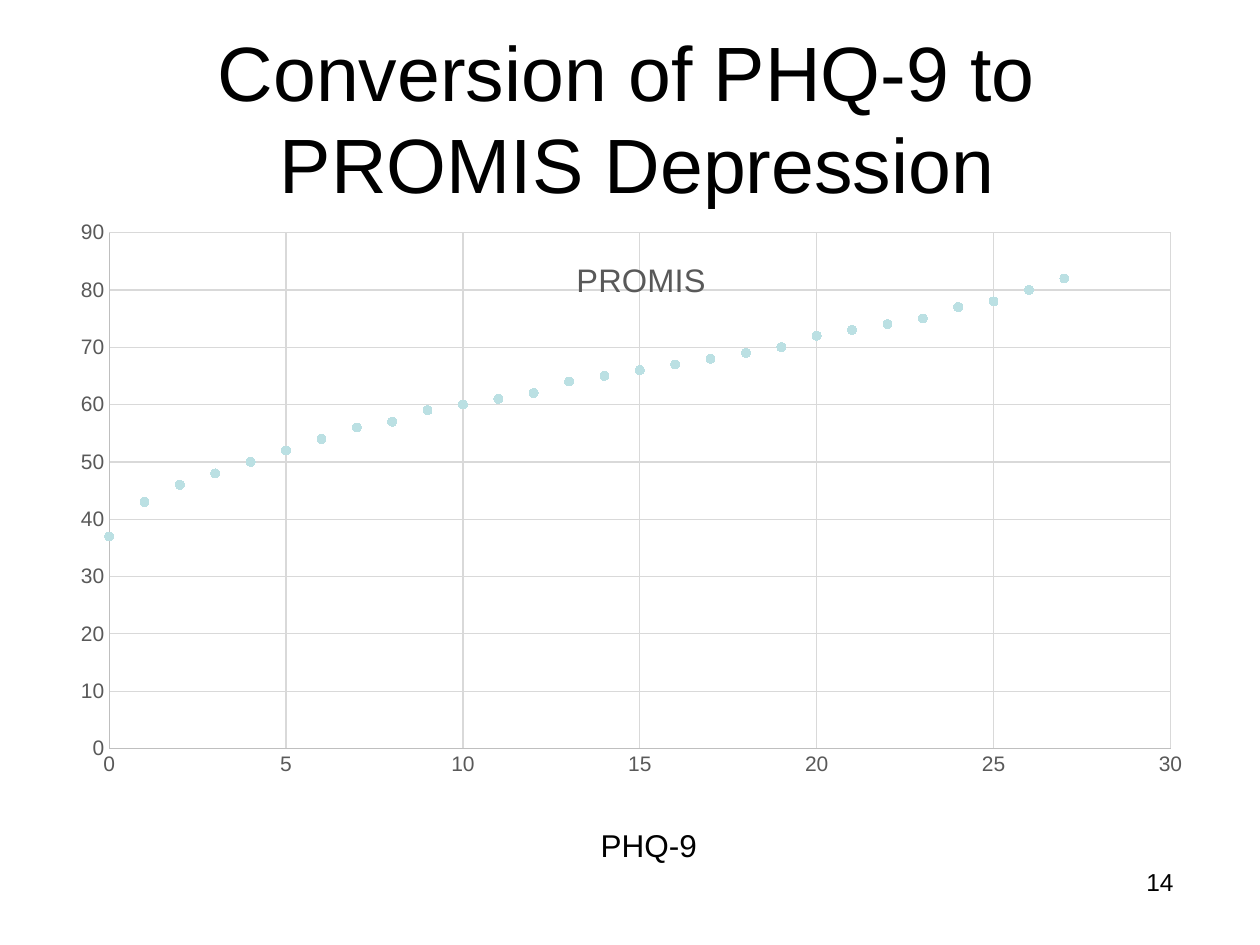
from lxml.etree import SubElement
from pptx import Presentation
from pptx.chart.data import XyChartData
from pptx.dml.color import RGBColor
from pptx.enum.chart import XL_CHART_TYPE as CT, XL_MARKER_STYLE as MS, XL_TICK_MARK as TM
from pptx.enum.text import MSO_ANCHOR, PP_ALIGN
from pptx.oxml import parse_xml
from pptx.oxml.ns import nsdecls, qn
from pptx.util import Pt

COLORS = {"text": "000000", "label": "595959", "axis": "BFBFBF",
          "grid": "D9D9D9", "dot": "BBE0E3"}
PROMIS = [37, 43, 46, 48, 50, 52, 54, 56, 57, 59, 60, 61, 62, 64,
          65, 66, 67, 68, 69, 70, 72, 73, 74, 75, 77, 78, 80, 82]


def set_font(font, size, color="text"):
    font.name, font.size, font.bold = "Arial", Pt(size), False
    font.color.rgb = RGBColor.from_string(COLORS[color])


def set_layout(parent, index, **values):
    for old in parent.findall(qn("c:layout")):
        parent.remove(old)
    layout = parse_xml(f"<c:layout {nsdecls('c')}><c:manualLayout/></c:layout>")
    for tag, value in values.items():
        SubElement(layout[0], qn(f"c:{tag}")).set("val", str(value))
    parent.insert(index, layout)


prs = Presentation()
prs.slide_width, prs.slide_height = Pt(720), Pt(540)
s = prs.slides.add_slide(prs.slide_layouts[5])

# Title
title = s.shapes.title
title.left, title.top, title.width, title.height = Pt(0), Pt(21.6), Pt(728.6), Pt(90)
tf = title.text_frame
tf.text = "Conversion of PHQ-9 to \vPROMIS Depression"
tf.vertical_anchor = MSO_ANCHOR.MIDDLE
p = tf.paragraphs[0]
p.alignment = PP_ALIGN.CENTER
for r in p.runs:
    set_font(r.font, 44)

# Scatter chart: one PROMIS score for each PHQ-9 score from 0
data = XyChartData()
series = data.add_series("PROMIS")
for phq9, promis in enumerate(PROMIS):
    series.add_data_point(phq9, promis)
chart = s.shapes.add_chart(CT.XY_SCATTER, Pt(40.3), Pt(126), Pt(649.4), Pt(365.8), data).chart
set_font(chart.font, 10)
chart.has_legend = False
chart.plots[0].vary_by_categories = False
set_layout(chart._chartSpace.chart.plotArea, 0, layoutTarget="inner", xMode="edge",
           yMode="edge", x=0.034, y=0.019, w=0.934, h=0.806)

# Chart title, laid over the plot
chart.has_title = True
ct = chart.chart_title
ct.text_frame.text = "PROMIS"
set_font(ct.text_frame.paragraphs[0].runs[0].font, 18.6, "label")
set_layout(ct._element, 1, xMode="edge", yMode="edge", x=0.44, y=0.05)
ct._element.find(qn("c:overlay")).set("val", "1")

# Axes
for axis, top, step in ((chart.category_axis, 30, 5), (chart.value_axis, 90, 10)):
    axis.minimum_scale, axis.maximum_scale, axis.major_unit = 0, top, step
    axis.major_tick_mark = axis.minor_tick_mark = TM.NONE
    axis.has_major_gridlines = True
    set_font(axis.tick_labels.font, 12, "label")
    for line, color in ((axis.format.line, "axis"), (axis.major_gridlines.format.line, "grid")):
        line.width = Pt(0.75)
        line.color.rgb = RGBColor.from_string(COLORS[color])

# Dots
dots = chart.plots[0].series[0]
dots.smooth = False
dots.format.line.fill.background()
dots.marker.style, dots.marker.size = MS.CIRCLE, 5
dots.marker.format.fill.solid()
dots.marker.format.fill.fore_color.rgb = RGBColor.from_string(COLORS["dot"])
dots.marker.format.line.color.rgb = RGBColor.from_string(COLORS["dot"])

# Horizontal axis name and slide number
for text, left, top, height, size in (("PHQ-9", 336.2, 468.7, 28.8, 18),
                                      ("14", 648, 491.8, 24.5, 14)):
    tf = s.shapes.add_textbox(Pt(left), Pt(top), Pt(72), Pt(height)).text_frame
    tf.word_wrap = True
    r = tf.paragraphs[0].add_run()
    r.text = text
    set_font(r.font, size)

prs.save("out.pptx")
